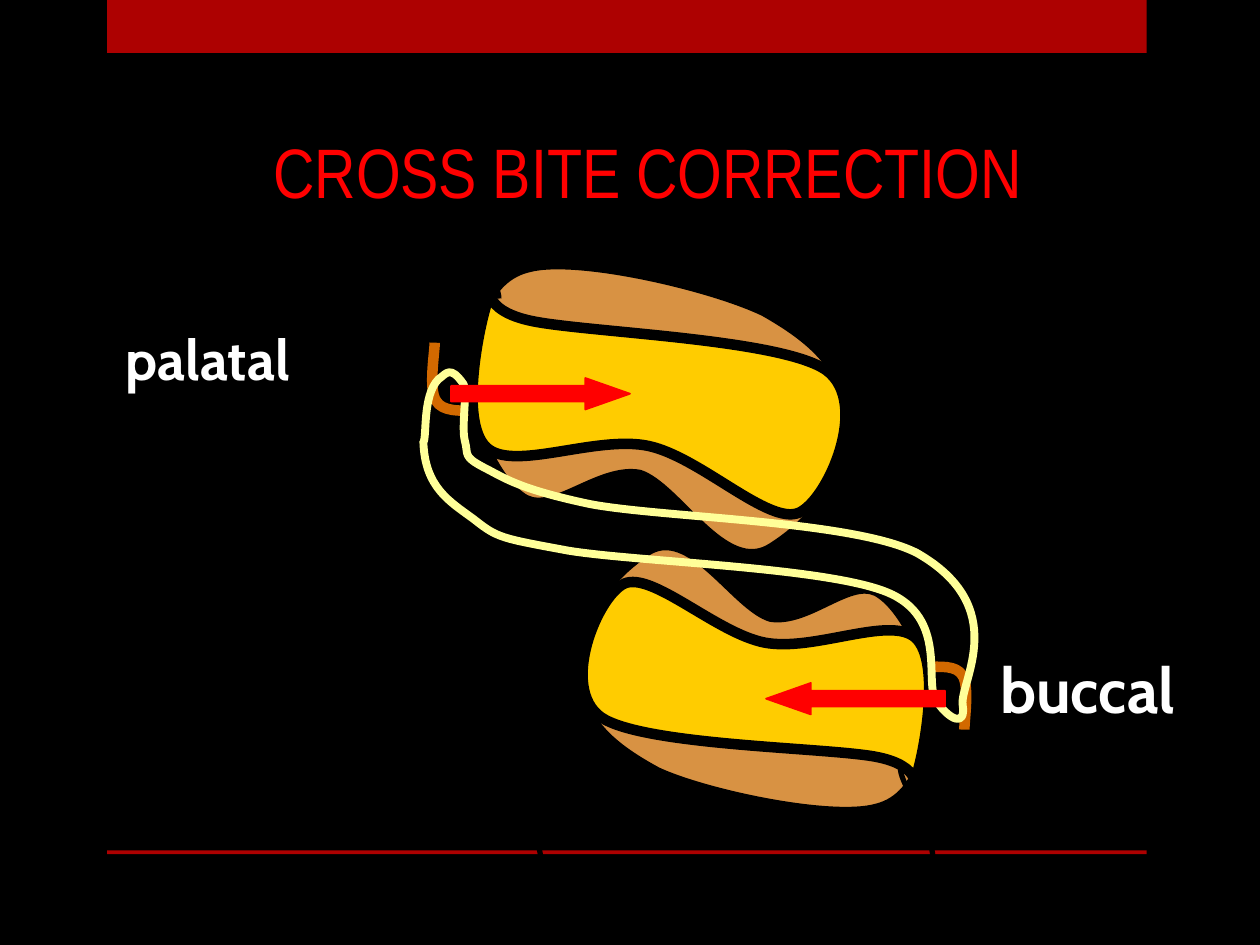
from math import cos, radians, sin

from lxml import etree
from pptx import Presentation
from pptx.dml.color import RGBColor
from pptx.enum.shapes import MSO_SHAPE
from pptx.enum.text import MSO_ANCHOR, PP_ALIGN
from pptx.oxml.ns import qn
from pptx.util import Inches, Pt

RECTANGLE, ARROW = MSO_SHAPE.RECTANGLE, MSO_SHAPE.RIGHT_ARROW
TOP, BOTTOM = MSO_ANCHOR.TOP, MSO_ANCHOR.BOTTOM
LEFT, CENTER = PP_ALIGN.LEFT, PP_ALIGN.CENTER
CELL = Inches(1)
UPPER_TURN, LOWER_TURN = 24, 202.8
COLORS = {
    "black": "000000", "bar": "AD0101", "red": "FF0000", "white": "FFFFFF",
    "gum": "D89243", "crown": "FFCC00", "hook": "D26900", "elastic": "FFFF99",
}
TOOTH_KNOTS = {
    "gum": [(1.2, 1.14), (1.58, 1.04), (2.65, 1.29), (3.06, 1.49),
            (3.41, 1.69), (3.74, 1.94), (3.7, 2.37),
            (3.66, 2.8), (3.48, 3.1), (3.12, 3.33),
            (2.76, 3.57), (2.39, 2.85), (2.08, 2.75),
            (1.76, 2.69), (1.4, 3.06), (1.18, 2.95),
            (0.96, 2.83), (0.75, 2.36), (0.75, 2.06),
            (0.75, 1.76), (0.81, 1.23), (1.2, 1.14)],
    "inner root": [(0.97, 0.08), (0.36, 0.48), (0.96, 1.16), (0.96, 1.37)],
    "outer root": [(4.01, 0.67), (4.01, 0.8), (4.11, 1.08), (4.07, 1.31),
                   (4.03, 1.54), (3.65, 1.91), (3.6, 2.02)],
    "hook": [(0.78, 2.26), (0.65, 2.26), (0.51, 2.27), (0.46, 2.18),
             (0.4, 2.09), (0.45, 1.8), (0.45, 1.72)],
    "crown": [(0.87, 1.39), (0.93, 1.23), (0.78, 1.46), (1.23, 1.55),
              (1.68, 1.64), (3.21, 1.69), (3.56, 1.94),
              (3.91, 2.2), (3.57, 2.97), (3.34, 3.07),
              (3.1, 3.17), (2.56, 2.63), (2.15, 2.54),
              (1.73, 2.45), (1.07, 2.75), (0.86, 2.55),
              (0.64, 2.34), (0.81, 1.56), (0.87, 1.39)],
}
UPPER_BOXES = {
    "gum": (0.52, 1.16, 3.23, 2.13), "inner root": (0.33, 0.05, 0.91, 1.18),
    "outer root": (3.71, 0.69, 0.38, 1.4), "hook": (0.33, 1.81, 0.52, 0.47),
    "crown": (0.59, 1.31, 3.17, 1.84),
}
LOWER_BOXES = {
    "gum": (0.57, 0.41, 3, 1.99), "inner root": (2.9, 2.23, 0.85, 1.1),
    "outer root": (0.23, 1.61, 0.35, 1.31), "hook": (3.28, 1.27, 0.48, 0.44),
    "crown": (0.58, 0.53, 2.94, 1.72),
}
TOOTH_STYLES = {
    "gum": {"fill": "gum", "line": "black", "weight": 3},
    "inner root": {"line": "black", "weight": 3},
    "outer root": {"line": "black", "weight": 3},
    "hook": {"line": "hook", "weight": 6},
    "crown": {"fill": "crown", "line": "black", "weight": 6},
}
ELASTIC_BOX = (3.35, 2.89, 4.68, 2.89)
ELASTIC = [(3.36, 3.51), (3.39, 3.47), (3.35, 3.14), (3.48, 3.01),
           (3.54, 2.97), (3.57, 2.89), (3.68, 3.05),
           (3.71, 3.13), (3.66, 3.39), (3.69, 3.5),
           (3.72, 3.61), (3.67, 3.62), (3.84, 3.71),
           (4, 3.79), (4.11, 3.88), (4.68, 4),
           (5.25, 4.11), (6.78, 4.13), (7.28, 4.39),
           (8.03, 4.82), (7.62, 5.41), (7.64, 5.59),
           (7.67, 5.78), (7.53, 5.71), (7.43, 5.56),
           (7.33, 5.42), (7.53, 4.9), (7.04, 4.7),
           (6.55, 4.5), (5.06, 4.46), (4.51, 4.37),
           (3.97, 4.27), (3.95, 4.27), (3.76, 4.12),
           (3.57, 3.98), (3.37, 3.87), (3.36, 3.5)]


def color(name):
    """Return the named colour."""
    return RGBColor.from_string(COLORS[name])


def paint(shape, fill=None, line=None, weight=1):
    """Set the fill and outline of a shape and drop its shadow."""
    shape.shadow.inherit = False
    if fill:
        shape.fill.solid()
        shape.fill.fore_color.rgb = color(fill)
    else:
        shape.fill.background()
    if line:
        shape.line.color.rgb = color(line)
        shape.line.width = Pt(weight)
    else:
        shape.line.fill.background()


def place(shape, box):
    """Move a shape to a box given in grid cells."""
    shape.left, shape.top, shape.width, shape.height = (round(side * CELL) for side in box)


def box_shares(knots, box, turn=0):
    """Return knots as shares of a box, with the turn of the box undone."""
    left, top, width, height = box
    cosine, sine = cos(radians(turn)), sin(radians(turn))
    offsets = [(x - left - width / 2, y - top - height / 2) for x, y in knots]
    return [(0.5 + (x * cosine + y * sine) / width, 0.5 + (y * cosine - x * sine) / height)
            for x, y in offsets]


def add_curve(page, box, shares, turn=0, **style):
    """Draw a chain of cubic curves whose knots are shares of a box."""
    shape = page.shapes.build_freeform().add_line_segments([(CELL, CELL)]).convert_to_shape()
    place(shape, box)
    shape.rotation = turn
    outline = next(shape.element.iter(qn("a:path")))
    for child in list(outline):
        outline.remove(child)
    outline.set("w", str(shape.width))
    outline.set("h", str(shape.height))
    segments = [("a:moveTo", shares[:1])]
    segments += [("a:cubicBezTo", shares[index:index + 3]) for index in range(1, len(shares), 3)]
    for tag, knots in segments:
        segment = etree.SubElement(outline, qn(tag))
        for x, y in knots:
            etree.SubElement(segment, qn("a:pt"), x=str(round(x * shape.width)),
                             y=str(round(y * shape.height)))
    if shares[0] == shares[-1]:
        etree.SubElement(outline, qn("a:close"))
    paint(shape, **style)
    return shape


def add_tooth(page, origin, boxes, turn):
    """Draw a grouped tooth with its gum, roots, hook and crown."""
    parts = []
    for name, (left, top, width, height) in boxes.items():
        shares = box_shares(TOOTH_KNOTS[name], UPPER_BOXES[name], UPPER_TURN)
        box = (origin[0] + left, origin[1] + top, width, height)
        parts.append(add_curve(page, box, shares, turn, **TOOTH_STYLES[name]))
    page.shapes.add_group_shape(parts)


def add_preset(page, kind, box, **style):
    """Add a painted preset shape."""
    shape = page.shapes.add_shape(kind, 0, 0, CELL, CELL)
    place(shape, box)
    paint(shape, **style)
    return shape


def add_arrow(page, box, turn=0):
    """Add a red force arrow."""
    arrow = add_preset(page, ARROW, box, fill="red", line="red")
    arrow.adjustments[0], arrow.adjustments[1] = 0.5, 1.42
    arrow.rotation = turn


def write(shape, text, size, font, ink, bold=False, align=LEFT, anchor=TOP):
    """Fill a shape with one formatted line of text."""
    frame = shape.text_frame
    frame.word_wrap = True
    frame.vertical_anchor = anchor
    para = frame.paragraphs[0]
    para.alignment = align
    span = para.add_run()
    span.text = text
    span.font.size, span.font.name, span.font.bold = Pt(size), font, bold
    span.font.color.rgb = color(ink)


def add_title(page, box, text):
    """Format the title and bring it in front of the drawing."""
    title = page.shapes.title
    place(title, box)
    title.element.getparent().append(title.element)
    write(title, text, 40, "Arial Narrow", "red", align=CENTER, anchor=BOTTOM)


def add_label(page, box, text, size):
    """Add a bold white label."""
    label = page.shapes.add_textbox(0, 0, CELL, CELL)
    place(label, box)
    write(label, text, size, "Cabin", "white", bold=True)


def build_page(page):
    """Build the cross bite slide."""
    page.background.fill.solid()
    page.background.fill.fore_color.rgb = color("black")
    for top, height in ((0, 0.42), (6.75, 0.03)):
        add_preset(page, RECTANGLE, (0.85, top, 8.25, height), fill="bar")
    add_tooth(page, (3, 1), UPPER_BOXES, UPPER_TURN)
    add_tooth(page, (4, 4), LOWER_BOXES, LOWER_TURN)
    add_curve(page, ELASTIC_BOX, box_shares(ELASTIC, ELASTIC_BOX), line="elastic", weight=4.5)
    add_title(page, (1.43, 0.66, 7.42, 1.08), "CROSS BITE CORRECTION")
    add_label(page, (0.9, 2.53, 2.42, 0.64), "palatal", 32)
    add_label(page, (7.84, 5.11, 2.5, 0.71), "buccal", 36)
    add_arrow(page, (6.08, 5.42, 1.42, 0.25), turn=180)
    add_arrow(page, (3.58, 3, 1.42, 0.25))


def main():
    """Create and save the deck."""
    deck = Presentation()
    deck.slide_width, deck.slide_height = 10 * CELL, round(7.5 * CELL)
    build_page(deck.slides.add_slide(deck.slide_layouts[5]))
    deck.save("out.pptx")


if __name__ == "__main__":
    main()
